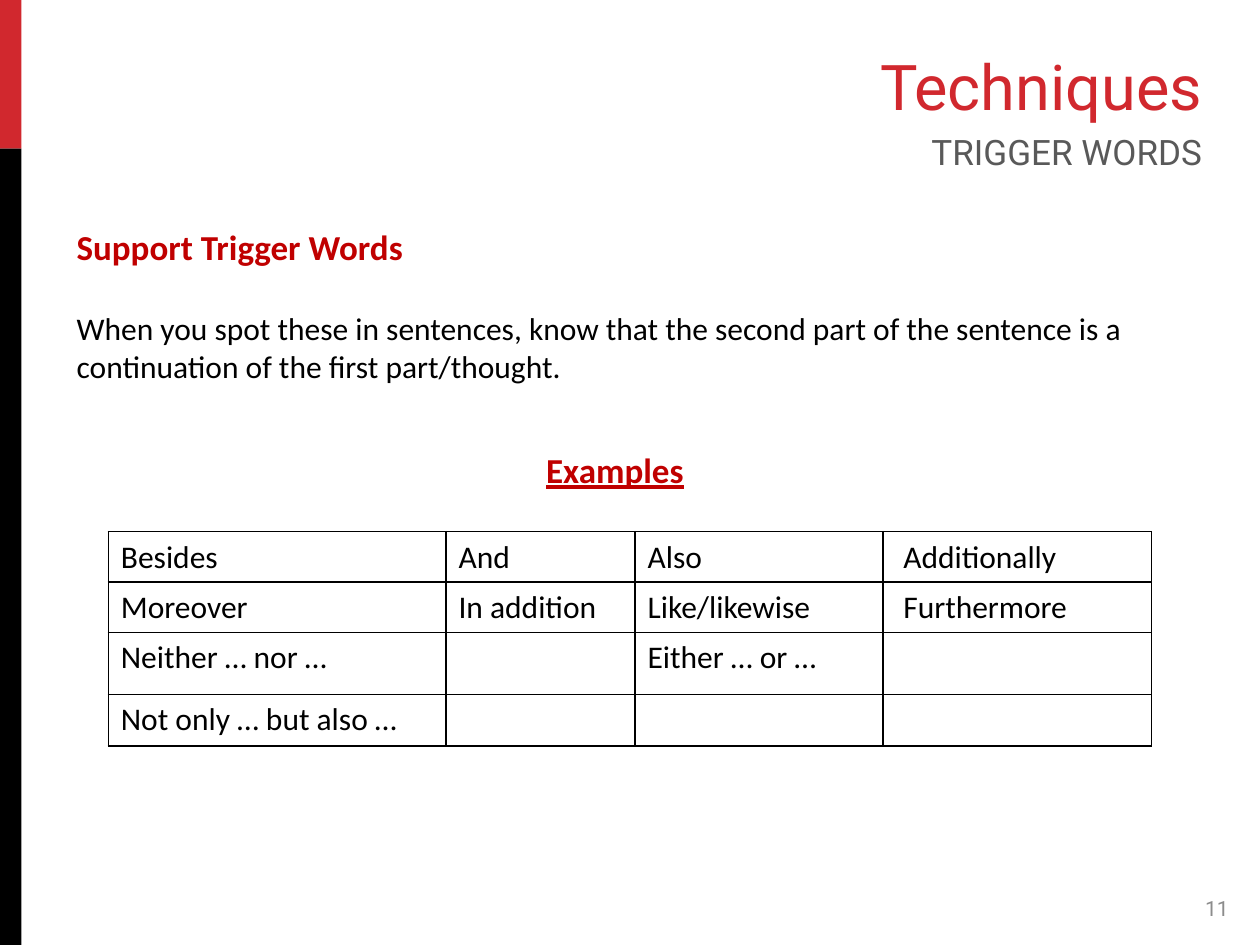
from lxml import etree
from pptx import Presentation
from pptx.dml.color import RGBColor
from pptx.enum import shapes, text
from pptx.oxml import ns
from pptx.util import Inches, Pt

COLORS = {"red": "D1282E", "dark_red": "C00000", "black": "000000",
          "white": "FFFFFF", "gray": "595959", "light_gray": "8C8C8C"}
ALIGN = text.PP_ALIGN
ANCHOR = text.MSO_ANCHOR


def rgb(name):
    return RGBColor.from_string(COLORS[name])


def write(p, words, size=18, font="Calibri", color="black", bold=False,
          underline=False, align=ALIGN.LEFT, before=0):
    p.alignment = align
    if before:
        p.space_before = Pt(before)
    r = p.add_run()
    r.text = words
    f = r.font
    f.name, f.size, f.bold, f.underline = font, Pt(size), bold, underline
    f.color.rgb = rgb(color)


class Deck:
    def __init__(self, width, height):
        self.prs = Presentation()
        self.prs.slide_width, self.prs.slide_height = Inches(width), Inches(height)
        self.s = self.prs.slides.add_slide(self.prs.slide_layouts[6])

    def bar(self, box, color):
        sp = self.s.shapes.add_shape(shapes.MSO_SHAPE.RECTANGLE, *map(Inches, box))
        sp.shadow.inherit = False
        sp.fill.solid()
        sp.fill.fore_color.rgb = rgb(color)
        sp.line.fill.background()

    def text(self, box, *paragraphs, anchor=ANCHOR.TOP):
        tf = self.s.shapes.add_textbox(*map(Inches, box)).text_frame
        tf.word_wrap = True
        tf.vertical_anchor = anchor
        for i, (words, style) in enumerate(paragraphs):
            write(tf.add_paragraph() if i else tf.paragraphs[0], words, **style)

    def borders(self, cell, color="black", width=1):
        tcPr = cell._tc.get_or_add_tcPr()
        for i, side in enumerate(("a:lnL", "a:lnR", "a:lnT", "a:lnB")):
            ln = etree.Element(ns.qn(side), w=str(Pt(width)))
            fill = etree.SubElement(ln, ns.qn("a:solidFill"))
            etree.SubElement(fill, ns.qn("a:srgbClr"), val=COLORS[color])
            tcPr.insert(i, ln)

    def table(self, left, top, widths, heights, rows):
        size = map(Inches, (left, top, sum(widths), sum(heights)))
        table = self.s.shapes.add_table(len(rows), len(widths), *size).table
        for column, width in zip(table.columns, widths):
            column.width = Inches(width)
        for row, height, words in zip(table.rows, heights, rows):
            row.height = Inches(height)
            for cell, word in zip(row.cells, words):
                cell.fill.solid()
                cell.fill.fore_color.rgb = rgb("white")
                self.borders(cell)
                if word:
                    write(cell.text_frame.paragraphs[0], word)
        # The last column is set in slightly
        for row in table.rows:
            row.cells[len(widths) - 1].margin_left = Inches(0.16)


def main():
    deck = Deck(10, 7.5)

    # Side bar
    deck.bar((0, 0, 0.17, 1.18), "red")
    deck.bar((0, 1.18, 0.17, 6.32), "black")

    # Title, subtitle and slide number
    header = dict(font="Roboto", align=ALIGN.RIGHT)
    deck.text((1.77, 0.1, 7.87, 0.93),
              ("Techniques", dict(header, size=36, color="red")), anchor=ANCHOR.BOTTOM)
    deck.text((1.77, 0.99, 7.87, 0.47),
              ("TRIGGER WORDS", dict(header, size=20, color="gray")))
    deck.text((8.94, 7.01, 0.91, 0.39),
              ("11", dict(header, size=12, color="light_gray")), anchor=ANCHOR.MIDDLE)

    # Explanation
    heading = dict(size=20, color="dark_red", bold=True)
    deck.text((0.51, 1.74, 9.09, 1.38),
              ("Support Trigger Words", heading),
              ("When you spot these in sentences, know that the second part of "
               "the sentence is a continuation of the first part/thought.",
               dict(before=24)))

    # Examples
    deck.text((0.67, 3.51, 8.42, 0.44),
              ("Examples", dict(heading, underline=True, align=ALIGN.CENTER)))
    deck.table(0.86, 4.22, (2.68, 1.5, 1.97, 2.13), (0.4, 0.4, 0.49, 0.41), [
        ("Besides", "And", "Also", "Additionally"),
        ("Moreover", "In addition", "Like/likewise", "Furthermore"),
        ("Neither … nor …", "", "Either … or …", ""),
        ("Not only … but also …", "", "", ""),
    ])

    deck.prs.save("out.pptx")


if __name__ == "__main__":
    main()
